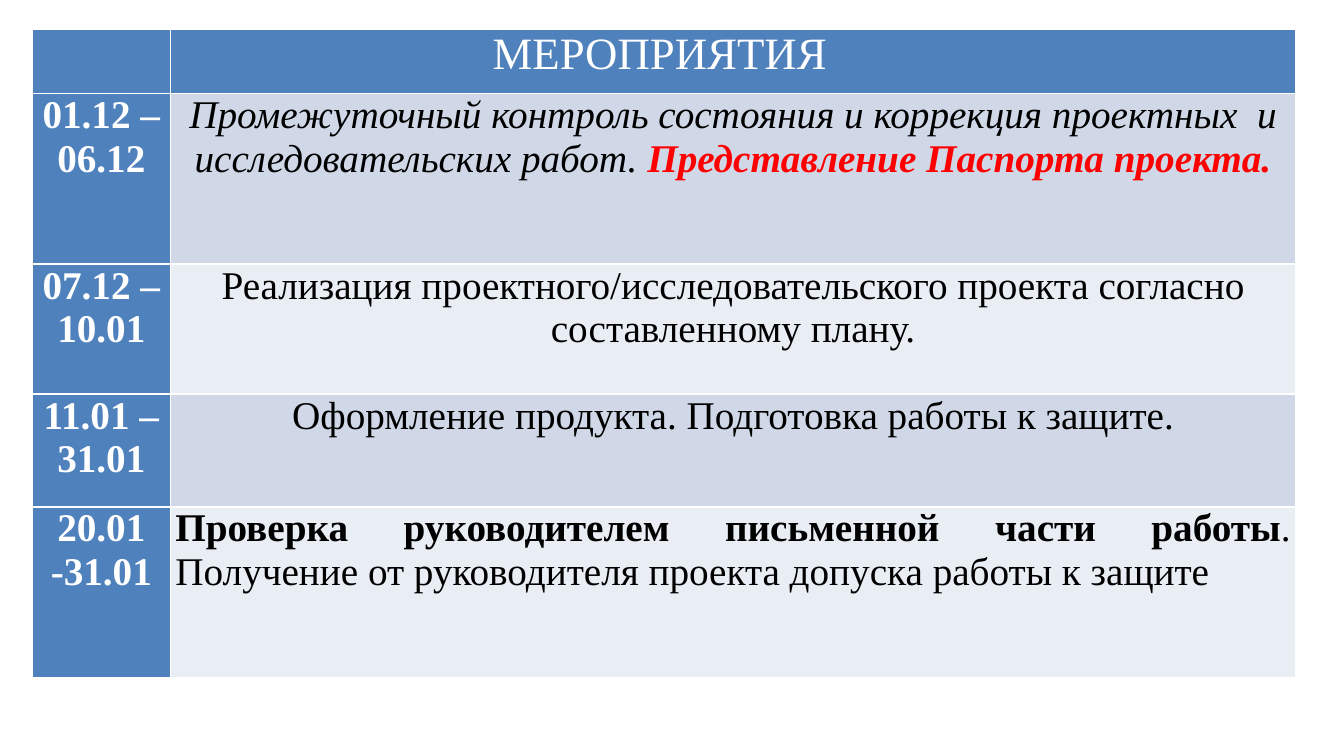
from dataclasses import dataclass

from lxml.etree import SubElement
from pptx import Presentation
from pptx.dml.color import RGBColor as RGB
from pptx.enum.text import PP_ALIGN as Align
from pptx.oxml.ns import qn
from pptx.util import Inches, Pt


@dataclass(frozen=True)
class Theme:
    font: str = "Times New Roman"
    header_size: int = 32
    body_size: int = 28
    blue: str = "4F81BD"
    bands: tuple = ("D0D8E8", "E9EDF4")
    white: str = "FFFFFF"
    black: str = "000000"
    red: str = "FF0000"
    border_width: int = 1


theme = Theme()


def fill_cell(cell, runs, fill, size=theme.body_size, align=Align.CENTER):
    """Write (text, colour, bold, italic) runs on a filled cell."""
    cell.margin_left = cell.margin_right = Inches(0.05)
    cell.margin_top = cell.margin_bottom = Inches(0)
    cell.fill.solid()
    cell.fill.fore_color.rgb = RGB.from_string(fill)
    paragraph = cell.text_frame.paragraphs[0]
    paragraph.alignment = align
    for text, color, bold, italic in runs:
        run = paragraph.add_run()
        run.text = text
        run.font.name = theme.font
        run.font.size = Pt(size)
        run.font.bold = bold
        run.font.italic = italic
        run.font.color.rgb = RGB.from_string(color)


def outline_cell(cell):
    """Draw the four borders, which come before the fill in the cell properties."""
    properties = cell._tc.get_or_add_tcPr()
    for index, side in enumerate(("lnL", "lnR", "lnT", "lnB")):
        line = SubElement(properties, qn(f"a:{side}"), w=str(Pt(theme.border_width)))
        SubElement(SubElement(line, qn("a:solidFill")), qn("a:srgbClr"), val=theme.white)
        properties.insert(index, line)


# Content: dates, alignment and runs of each event
events = [
    ("01.12 – 06.12", Align.CENTER, [
        ("Промежуточный контроль состояния и коррекция проектных  и "
         "исследовательских работ. ", theme.black, False, True),
        ("Представление Паспорта проекта.", theme.red, True, True)]),
    ("07.12 – 10.01", Align.CENTER, [
        ("Реализация проектного/исследовательского проекта согласно "
         "составленному плану.", theme.black, False, False)]),
    ("11.01 – 31.01", Align.CENTER, [
        ("Оформление продукта. Подготовка работы к защите.",
         theme.black, False, False)]),
    ("20.01 -31.01", Align.JUSTIFY, [
        ("Проверка руководителем письменной части работы",
         theme.black, True, False),
        (". Получение от руководителя проекта допуска работы к защите",
         theme.black, False, False)]),
]
column_widths = (1.37, 11.16)
row_heights = (0.64, 1.69, 1.29, 1.12, 1.69)

# Slide
deck = Presentation()
deck.slide_width, deck.slide_height = Inches(13.33), Inches(7.5)
slide = deck.slides.add_slide(deck.slide_layouts[6])

# Schedule grid
schedule = slide.shapes.add_table(
    len(row_heights), len(column_widths), Inches(0.32), Inches(0.29),
    Inches(sum(column_widths)), Inches(sum(row_heights))).table
for column, width in zip(schedule.columns, column_widths):
    column.width = Inches(width)
for row, height in zip(schedule.rows, row_heights):
    row.height = Inches(height)

# Header, with its title set left of the cell's centre
fill_cell(schedule.cell(0, 0), [], theme.blue)
title = schedule.cell(0, 1)
fill_cell(title, [("МЕРОПРИЯТИЯ", theme.white, False, False)],
          theme.blue, theme.header_size)
title.margin_right = Inches(1.5)

# Events on alternating bands
for number, (dates, align, runs) in enumerate(events):
    fill_cell(schedule.cell(number + 1, 0),
              [(dates, theme.white, True, False)], theme.blue)
    fill_cell(schedule.cell(number + 1, 1), runs,
              theme.bands[number % 2], align=align)

# Borders
for cell in schedule.iter_cells():
    outline_cell(cell)

deck.save("out.pptx")
